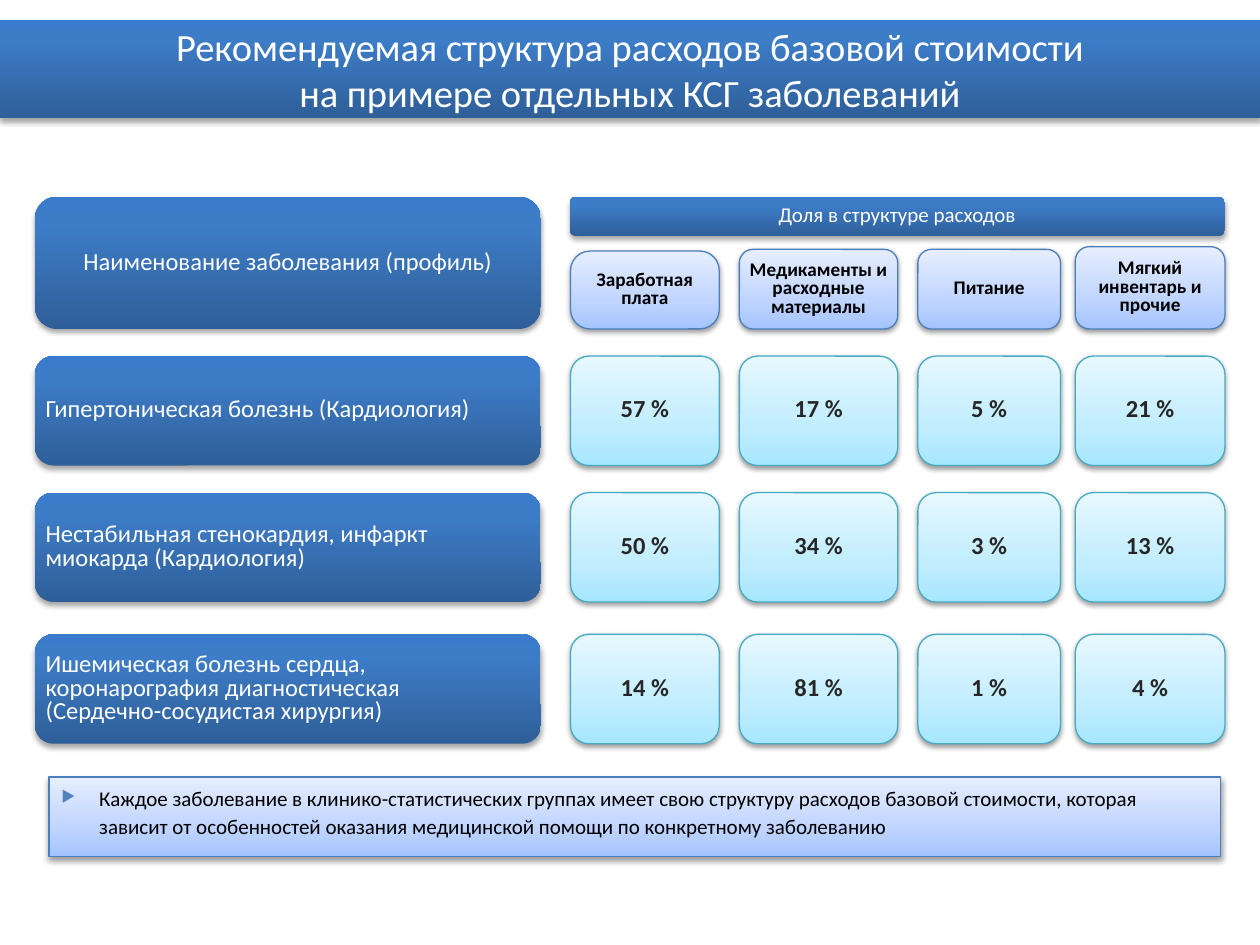
from copy import deepcopy

from lxml import etree
from pptx import Presentation
from pptx.dml.color import RGBColor
from pptx.enum.shapes import MSO_SHAPE
from pptx.enum.text import MSO_ANCHOR, PP_ALIGN
from pptx.oxml.ns import qn
from pptx.util import Pt

RECT, ROUNDED = MSO_SHAPE.RECTANGLE, MSO_SHAPE.ROUNDED_RECTANGLE
LEFT, CENTER = PP_ALIGN.LEFT, PP_ALIGN.CENTER
TOP, MIDDLE = MSO_ANCHOR.TOP, MSO_ANCHOR.MIDDLE

WHITE = RGBColor(0xFF, 0xFF, 0xFF)
BLACK = RGBColor(0x00, 0x00, 0x00)
DARK_GREY = RGBColor(0x26, 0x26, 0x26)
BULLET_BLUE = RGBColor(0x4F, 0x81, 0xBD)
PALE_OUTLINE = RGBColor(0x4B, 0x7E, 0xBC)
CYAN_OUTLINE = RGBColor(0x46, 0xAA, 0xC5)

# Gradient stops run from the bottom edge to the top edge.
STRONG_BLUE = [(0, RGBColor(0x2F, 0x5F, 0x99)), (0.8, RGBColor(0x3D, 0x7C, 0xC7)),
               (1, RGBColor(0x3A, 0x7C, 0xCB))]
PALE_BLUE = [(0, RGBColor(0xA4, 0xC4, 0xFF)), (0.35, RGBColor(0xBF, 0xD4, 0xFF)),
             (1, RGBColor(0xE6, 0xEE, 0xFF))]
CYAN = [(0, RGBColor(0xA7, 0xE6, 0xFF)), (0.35, RGBColor(0xC1, 0xED, 0xFF)),
        (1, RGBColor(0xE7, 0xF8, 0xFF))]

NAME_LEFT, NAME_WIDTH = 20, 289
HEADER_TOP, HEADER_BOTTOM = 112.5, 188
ROW_HEIGHT = 62.5

# Heading, left, width, heading height, corner rounding
COLUMNS = [
    ("Заработная плата", 326, 85, 44.5, 0.25),
    ("Медикаменты и расходные материалы", 422.5, 90.5, 45.5, 0.17),
    ("Питание", 524.5, 81.5, 45.5, 0.17),
    ("Мягкий инвентарь и прочие", 614.5, 85.5, 47, 0.17),
]

# Top, disease, share of each column in percent
DISEASES = [
    (203.5, "Гипертоническая болезнь (Кардиология)", (57, 17, 5, 21)),
    (281.5, "Нестабильная стенокардия, инфаркт миокарда (Кардиология)", (50, 34, 3, 13)),
    (362.5, "Ишемическая болезнь сердца,\vкоронарография диагностическая\n"
            "(Сердечно-сосудистая хирургия)", (14, 81, 1, 4)),
]


def fill_gradient(shape, stops):
    shape.fill.gradient()
    shape.fill.gradient_angle = 90
    stop_list = shape.fill._xPr.find(".//" + qn("a:gsLst"))
    stop_list.append(deepcopy(stop_list[0]))
    for stop, (position, color) in zip(shape.fill.gradient_stops, stops):
        stop.position = position
        stop.color.rgb = color


def add_shadow(shape, opacity, distance):
    shape.shadow.inherit = False
    effects = shape._element.spPr.find(qn("a:effectLst"))
    shadow = etree.SubElement(effects, qn("a:outerShdw"), blurRad=str(Pt(3.1)),
                              dist=str(Pt(distance)), dir="5400000", rotWithShape="0")
    black = etree.SubElement(shadow, qn("a:srgbClr"), val=str(BLACK))
    etree.SubElement(black, qn("a:alpha"), val=str(opacity * 1000))


def add_box(slide, kind, box, stops, outline=None):
    shape = slide.shapes.add_shape(kind, *map(Pt, box))
    fill_gradient(shape, stops)
    if outline is None:
        shape.line.fill.background()
        add_shadow(shape, 35, 1.8)
    else:
        shape.line.color.rgb = outline
        shape.line.width = Pt(0.75)
        add_shadow(shape, 38, 1.6)
    return shape


def write(shape, text, size, color, bold=False, align=CENTER, spacing=0.8,
          anchor=MIDDLE, insets=(3, 3)):
    """Fill the shape with text; insets are horizontal and vertical."""
    frame = shape.text_frame
    frame.word_wrap = True
    frame.vertical_anchor = anchor
    frame.margin_left = frame.margin_right = Pt(insets[0])
    frame.margin_top = frame.margin_bottom = Pt(insets[1])
    frame.text = text
    for paragraph in frame.paragraphs:
        paragraph.alignment = align
        paragraph.line_spacing = spacing
        paragraph.font.name = "Calibri"
        paragraph.font.size = Pt(size)
        paragraph.font.bold = bold
        paragraph.font.color.rgb = color


def add_bullet(paragraph, indent):
    properties = paragraph._p.get_or_add_pPr()
    properties.set("marL", str(Pt(indent)))
    properties.set("indent", str(-Pt(indent)))
    color = etree.Element(qn("a:buClr"))
    etree.SubElement(color, qn("a:srgbClr"), val=str(BULLET_BLUE))
    size = etree.Element(qn("a:buSzPct"), val="76000")
    mark = etree.Element(qn("a:buChar"), char="▶")
    run_defaults = properties.find(qn("a:defRPr"))
    for part in (color, size, mark):
        run_defaults.addprevious(part)


def add_title(slide):
    title = add_box(slide, RECT, (0, 11.5, 720, 56), STRONG_BLUE)
    write(title, "Рекомендуемая структура расходов базовой стоимости\v"
                 "на примере отдельных КСГ заболеваний",
          22, WHITE, spacing=1.0, insets=(7.2, 3.6))


def add_headings(slide):
    name = add_box(slide, ROUNDED, (NAME_LEFT, HEADER_TOP, NAME_WIDTH,
                                    HEADER_BOTTOM - HEADER_TOP), STRONG_BLUE)
    write(name, "Наименование заболевания (профиль)", 14, WHITE)
    share = add_box(slide, ROUNDED, (325.5, HEADER_TOP, 374.5, 22.5), STRONG_BLUE)
    write(share, "Доля в структуре расходов", 12, WHITE)
    for label, left, width, height, rounding in COLUMNS:
        heading = add_box(slide, ROUNDED, (left, HEADER_BOTTOM - height, width, height),
                          PALE_BLUE, PALE_OUTLINE)
        heading.adjustments[0] = rounding
        write(heading, label, 11, BLACK, bold=True)


def add_disease_row(slide, top, disease, shares):
    name = add_box(slide, ROUNDED, (NAME_LEFT, top, NAME_WIDTH, ROW_HEIGHT), STRONG_BLUE)
    write(name, disease, 14, WHITE, align=LEFT)
    for (_, left, width, *_), share in zip(COLUMNS, shares):
        cell = add_box(slide, ROUNDED, (left, top, width, ROW_HEIGHT), CYAN, CYAN_OUTLINE)
        write(cell, f"{share} %", 14, DARK_GREY, bold=True, insets=(1.5, 3))


def add_note(slide):
    note = add_box(slide, RECT, (28, 444, 669.5, 45.5), PALE_BLUE, PALE_OUTLINE)
    write(note, "Каждое заболевание в клинико-статистических группах имеет свою структуру "
                "расходов базовой стоимости, которая зависит от особенностей оказания "
                "медицинской помощи по конкретному заболеванию",
          12, BLACK, align=LEFT, spacing=1.1, anchor=TOP, insets=(7.2, 3.6))
    paragraph = note.text_frame.paragraphs[0]
    paragraph.space_before = Pt(6)
    add_bullet(paragraph, 21.6)


def main():
    presentation = Presentation()
    presentation.slide_width, presentation.slide_height = Pt(720), Pt(540)
    slide = presentation.slides.add_slide(presentation.slide_layouts[6])
    add_headings(slide)
    for row in DISEASES:
        add_disease_row(slide, *row)
    add_note(slide)
    add_title(slide)
    presentation.save("out.pptx")


if __name__ == "__main__":
    main()
